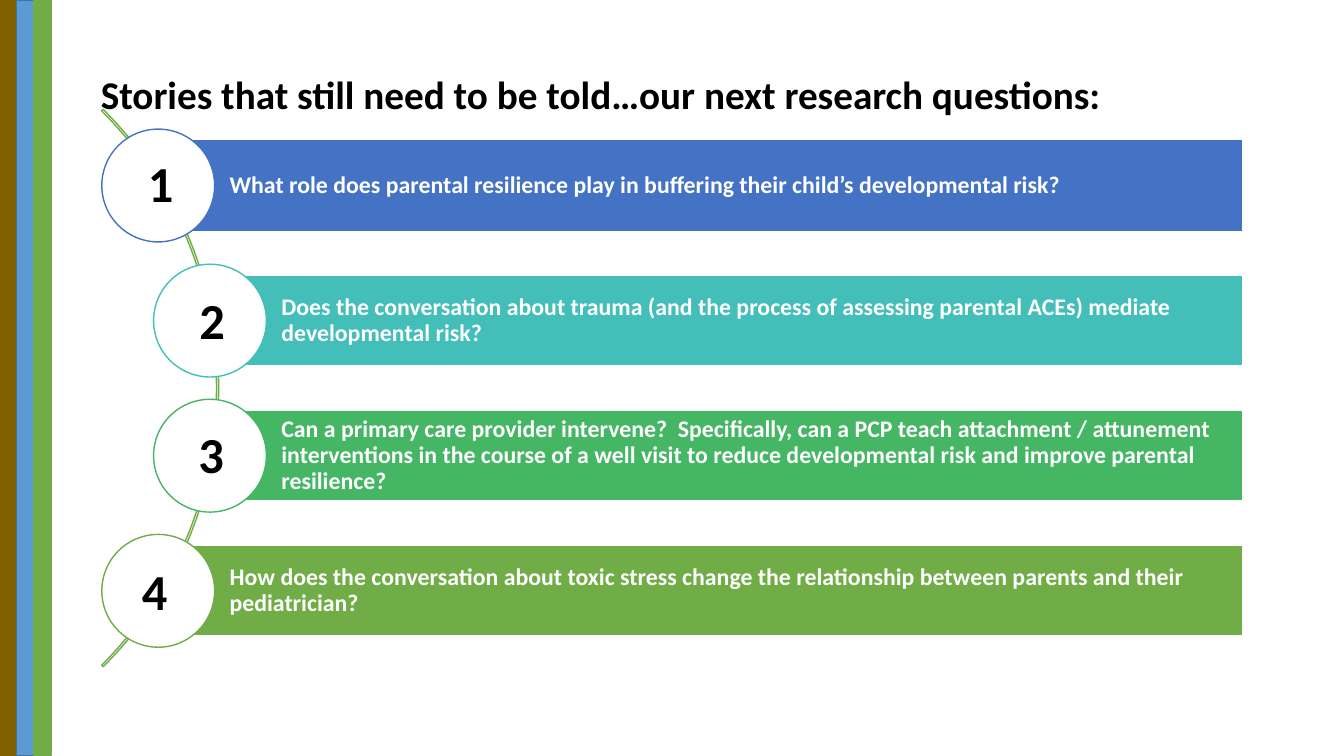
import pptx
import pptx.util
import pptx.dml.color
import pptx.enum.shapes
import pptx.enum.text

Pt = pptx.util.Pt
MSO = pptx.enum.shapes.MSO_SHAPE
ANCHOR = pptx.enum.text.MSO_ANCHOR

COLORS = {
    "black": "000000", "white": "FFFFFF", "blue": "4472C4", "teal": "43BEB9",
    "emerald": "45B664", "green": "70AD47", "brown": "806000",
    "sky": "5B9BD5", "sky_edge": "43739E",
}

# Question, colour, indent of the row, left and top of the number box
QUESTIONS = [
    ("What role does parental resilience play in buffering their child’s "
     "developmental risk?", "blue", 0, 98.6, 105.1),
    ("Does the conversation about trauma (and the process of assessing "
     "parental ACEs) mediate developmental risk?", "teal", 37, 135.4, 203),
    ("Can a primary care provider intervene?  Specifically, can a PCP teach "
     "attachment / attunement interventions in the course of a well visit to "
     "reduce developmental risk and improve parental resilience?",
     "emerald", 37, 134.6, 298.8),
    ("How does the conversation about toxic stress change the relationship "
     "between parents and their pediatrician?", "green", 0, 94.3, 396.7),
]
STRIPES = [("brown", "brown", 0, 0), ("sky", "sky_edge", 12, 0),
           ("green", "green", 24, -0.7)]

ROW_MIDDLE, ROW_PITCH = 132.5, 96.5
CIRCLE_LEFT, CIRCLE_SIZE = 72.7, 80.6
BAR_LEFT, BAR_RIGHT = 113, 887.8


def rgb(name):
    return pptx.dml.color.RGBColor.from_string(COLORS[name])


def write(tf, text, size, color="black", spacing=None, anchor=ANCHOR.TOP):
    tf.word_wrap = True
    tf.vertical_anchor = anchor
    p = tf.paragraphs[0]
    p.alignment = pptx.enum.text.PP_ALIGN.LEFT
    p.line_spacing = spacing
    r = p.add_run()
    r.text = text
    r.font.name = "Calibri"
    r.font.size = Pt(size)
    r.font.bold = True
    r.font.color.rgb = rgb(color)


def add_shape(shapes, kind, left, top, width, height, fill, line):
    sp = shapes.add_shape(kind, Pt(left), Pt(top), Pt(width), Pt(height))
    sp.shadow.inherit = False
    if fill:
        sp.fill.solid()
        sp.fill.fore_color.rgb = rgb(fill)
    else:
        sp.fill.background()
    sp.line.color.rgb = rgb(line)
    sp.line.width = Pt(1)
    return sp


def add_title(s, text):
    sp = s.shapes.title
    sp.left, sp.top, sp.width, sp.height = Pt(64.8), Pt(16.6), Pt(828), Pt(104.4)
    write(sp.text_frame, text, 28, spacing=0.9, anchor=ANCHOR.MIDDLE)


def add_arc(s):
    sp = add_shape(s.shapes, MSO.BLOCK_ARC, -406.8, -4.3, 563, 563, None, "green")
    # Start angle, end angle and thickness of the band
    for i, value in enumerate((189, 27, 0.00276)):
        sp.adjustments[i] = value


def add_question(s, row, text, color, indent):
    middle = ROW_MIDDLE + row * ROW_PITCH
    left = BAR_LEFT + indent
    height = 66 if row == 0 else 64.4
    bar = add_shape(s.shapes, MSO.RECTANGLE, left, middle - height / 2,
                    BAR_RIGHT - left, height, color, "white")
    tf = bar.text_frame
    tf.margin_left = Pt(51)
    tf.margin_top = tf.margin_right = tf.margin_bottom = Pt(3.6)
    write(tf, text, 17, "white", spacing=0.9, anchor=ANCHOR.MIDDLE)
    add_shape(s.shapes, MSO.OVAL, CIRCLE_LEFT + indent, middle - CIRCLE_SIZE / 2,
              CIRCLE_SIZE, CIRCLE_SIZE, "white", color)


def add_number(s, number, left, top):
    sp = s.shapes.add_textbox(Pt(left), Pt(top), Pt(36.7), Pt(51))
    write(sp.text_frame, str(number), 36)


def add_stripes(s):
    group = s.shapes.add_group_shape()
    for fill, line, left, top in STRIPES:
        add_shape(group.shapes, MSO.RECTANGLE, left, top, 13, 540, fill, line)


def main():
    prs = pptx.Presentation()
    prs.slide_width, prs.slide_height = Pt(960), Pt(540)
    s = prs.slides.add_slide(prs.slide_layouts[5])

    add_title(s, "Stories that still need to be told…our next research questions:")

    # Questions along the arc
    add_arc(s)
    for row, (text, color, indent, _, _) in enumerate(QUESTIONS):
        add_question(s, row, text, color, indent)
    for number, (_, _, _, left, top) in enumerate(QUESTIONS, 1):
        add_number(s, number, left, top)

    # Coloured stripes at the left edge
    add_stripes(s)
    prs.save("out.pptx")


if __name__ == "__main__":
    main()
